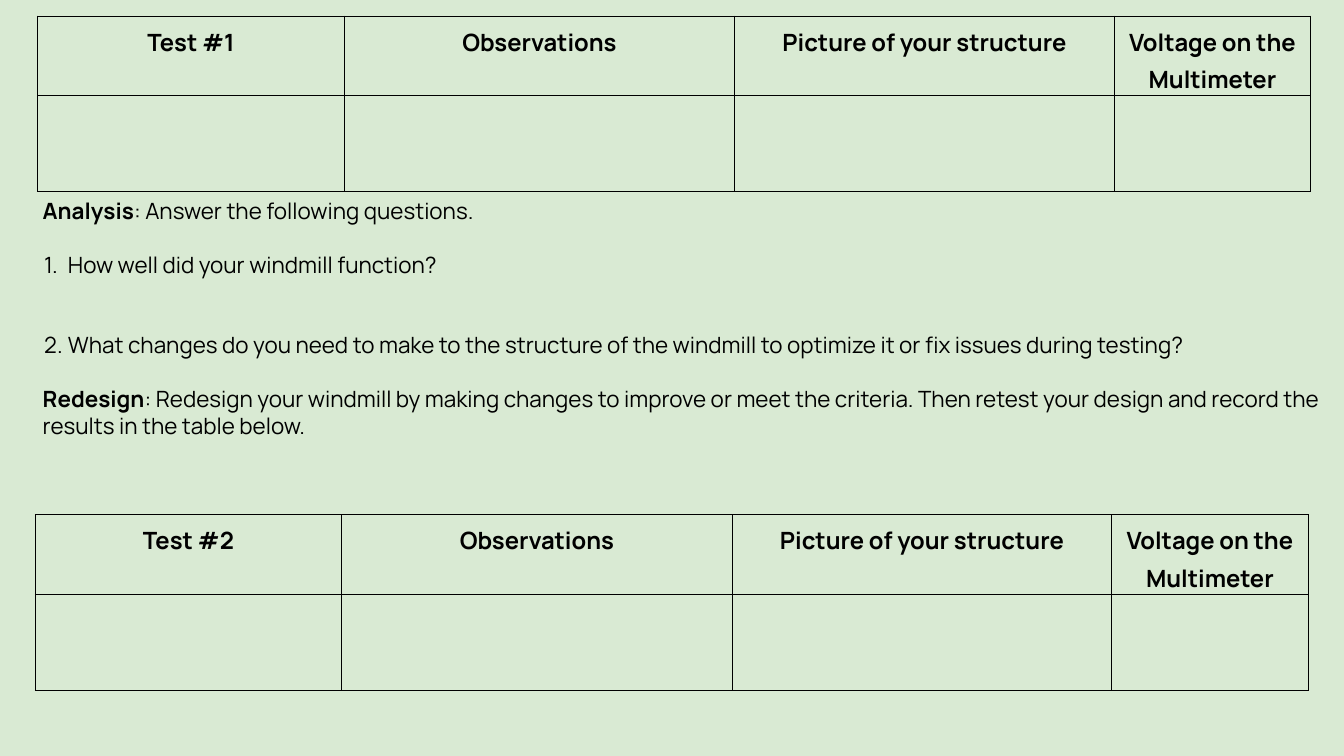
from lxml import etree
from pptx import Presentation
from pptx.dml.color import RGBColor
from pptx.enum.text import MSO_AUTO_SIZE, PP_ALIGN
from pptx.oxml import parse_xml
from pptx.oxml.ns import nsdecls, qn
from pptx.util import Inches, Pt

BLACK = RGBColor(0x00, 0x00, 0x00)
GREEN = RGBColor(0xD9, 0xEA, 0xD3)
FONT = "Manrope"
COLUMNS = (6.08, 7.75, 7.53, 3.9)
ROWS = (1.33, 1.9)
HEADINGS = ("Observations", "Picture of your structure", "Voltage on the Multimeter")
LINE = 38.4


def add_run(p, text, size, bold=False):
    r = p.add_run()
    r.text = text
    r.font.name = FONT
    r.font.size = Pt(size)
    r.font.bold = bold
    r.font.color.rgb = BLACK


def format_cell(cell):
    cell.margin_left = cell.margin_right = cell.margin_top = Inches(0.1)
    cell.margin_bottom = 0
    cell.fill.background()
    tcPr = cell._tc.get_or_add_tcPr()
    for i, side in enumerate(("lnL", "lnR", "lnT", "lnB")):
        tcPr.insert(i, parse_xml(
            f'<a:{side} {nsdecls("a")} w="{Pt(1.5)}"><a:solidFill>'
            f'<a:srgbClr val="{BLACK}"/></a:solidFill></a:{side}>'))


def add_test_table(s, name, left, top):
    frame = s.shapes.add_table(len(ROWS), len(COLUMNS), Inches(left), Inches(top),
                               Inches(sum(COLUMNS)), Inches(sum(ROWS)))
    table = frame.table
    table.first_row = table.horz_banding = False
    for column, width in zip(table.columns, COLUMNS):
        column.width = Inches(width)
    for row, height in zip(table.rows, ROWS):
        row.height = Inches(height)
    for cell in table.iter_cells():
        format_cell(cell)
    for cell, text in zip(table.rows[0].cells, (name, *HEADINGS)):
        p = cell.text_frame.paragraphs[0]
        p.alignment = PP_ALIGN.CENTER
        p.line_spacing = 1.15
        add_run(p, text, 34, True)


def number(p):
    pPr = p._p.get_or_add_pPr()
    pPr.set("marL", str(Inches(0.5)))
    pPr.set("indent", str(Inches(-0.47)))
    color = etree.SubElement(pPr, qn("a:buClr"))
    etree.SubElement(color, qn("a:srgbClr"), val=str(BLACK))
    etree.SubElement(pPr, qn("a:buFont"), typeface=FONT)
    etree.SubElement(pPr, qn("a:buAutoNum"), type="arabicPeriod")


def add_paragraph(p, text, label="", gap=0, numbered=False):
    if numbered:
        number(p)
    p.line_spacing = Pt(LINE)
    p.space_before = Pt(gap * LINE)
    if label:
        add_run(p, label, 32, True)
    add_run(p, text, 32)


def add_questions(s):
    tf = s.shapes.add_textbox(Inches(0.75), Inches(3.81), Inches(25.74), Inches(5.86)).text_frame
    tf.word_wrap = True
    tf.auto_size = MSO_AUTO_SIZE.NONE
    tf.margin_left = tf.margin_right = tf.margin_top = tf.margin_bottom = Inches(0.1)
    add_paragraph(tf.paragraphs[0], ": Answer the following questions.", "Analysis")
    add_paragraph(tf.add_paragraph(), "How well did your windmill function?", gap=1, numbered=True)
    add_paragraph(tf.add_paragraph(),
                  "What changes do you need to make to the structure of the windmill "
                  "to optimize it or fix issues during testing?", gap=2, numbered=True)
    add_paragraph(tf.add_paragraph(),
                  ": Redesign your windmill by making changes to improve or meet the criteria. "
                  "Then retest your design and record the results in the table below.",
                  "Redesign", gap=1)


def main():
    prs = Presentation()
    prs.slide_width, prs.slide_height = Inches(26.67), Inches(15)
    s = prs.slides.add_slide(prs.slide_layouts[6])
    s.background.fill.solid()
    s.background.fill.fore_color.rgb = GREEN
    add_questions(s)
    add_test_table(s, "Test #1", 0.75, 0.32)
    add_test_table(s, "Test #2", 0.7, 10.21)
    prs.save("out.pptx")


if __name__ == "__main__":
    main()
